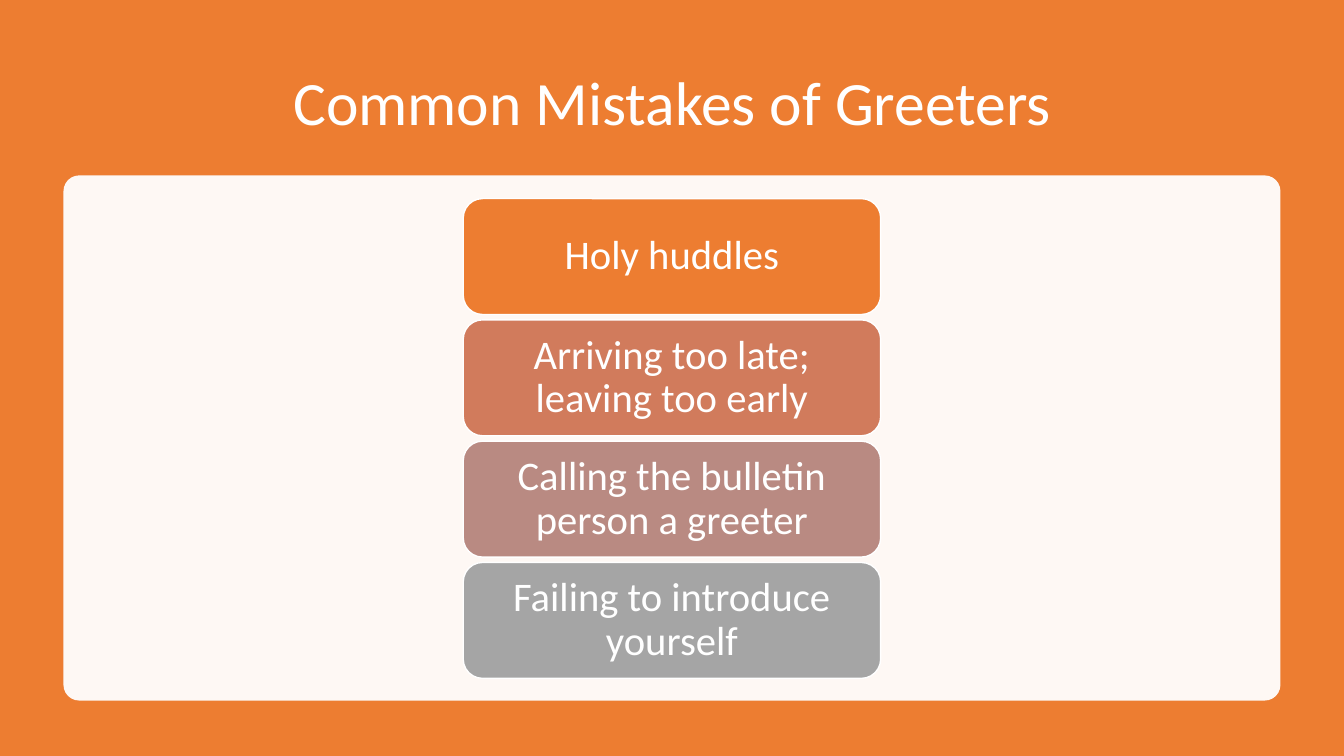
"""Build the slide on common mistakes of greeters."""
from lxml.etree import SubElement
from pptx import Presentation
from pptx.dml.color import RGBColor
from pptx.enum.shapes import MSO_SHAPE as Shape
from pptx.enum.text import MSO_ANCHOR as Anchor, MSO_AUTO_SIZE as AutoSize, PP_ALIGN as Align
from pptx.oxml.ns import qn
from pptx.util import Inches, Pt

HEADING = "Common Mistakes of Greeters"
MISTAKES = [
    ("Holy huddles", "ED7D31"),
    ("Arriving too late; leaving too early", "D17B5C"),
    ("Calling the bulletin person a greeter", "B98A82"),
    ("Failing to introduce yourself", "A5A5A5"),
]
ORANGE, WHITE = "ED7D31", "FFFFFF"
SLIDE_W, SLIDE_H = 13.33, 7.5
STACK_TOP, STACK_BOTTOM = 1.97, 6.73
BOX_W, BOX_H = 4.14, 1.15
FRAME = {
    "word_wrap": True,
    "auto_size": AutoSize.NONE,
    "vertical_anchor": Anchor.MIDDLE,
    "margin_left": Inches(0.12),
    "margin_right": Inches(0.12),
    "margin_top": Inches(0.06),
    "margin_bottom": Inches(0.06),
}
PARAGRAPH = {"alignment": Align.CENTER, "line_spacing": 0.9}


def paint(color_format, color):
    color_format.rgb = RGBColor.from_string(color)


def apply(target, values):
    for key, value in values.items():
        setattr(target, key, value)


def write(holder, words, size):
    frame = holder.text_frame
    frame.text = words
    apply(frame, FRAME)
    paragraph = frame.paragraphs[0]
    apply(paragraph, PARAGRAPH)
    font = paragraph.runs[0].font
    apply(font, {"name": "Calibri", "size": Pt(size)})
    paint(font.color, WHITE)


def add_block(slide, kind, place, color, outline=None):
    block = slide.shapes.add_shape(kind, *map(Inches, place))
    block.shadow.inherit = False
    block.fill.solid()
    paint(block.fill.fore_color, color)
    if outline:
        paint(block.line.color, outline)
        block.line.width = Pt(1)
    else:
        block.line.fill.background()
    return block


def main():
    deck = Presentation()
    deck.slide_width, deck.slide_height = Inches(SLIDE_W), Inches(SLIDE_H)
    slide = deck.slides.add_slide(deck.slide_layouts[5])

    heading = slide.shapes.title
    backdrop = add_block(slide, Shape.RECTANGLE, (0, 0, SLIDE_W, SLIDE_H), ORANGE)
    heading.element.addprevious(backdrop.element)
    apply(heading, {"left": Inches(0.92), "top": Inches(0.5),
                    "width": Inches(11.5), "height": Inches(1.1)})
    write(heading, HEADING, 44)

    panel = add_block(slide, Shape.ROUNDED_RECTANGLE, (0.63, 1.74, 12.07, 5.21), WHITE)
    panel.adjustments[0] = 0.03
    panel_color = panel.element.spPr.find(qn("a:solidFill"))[0]
    SubElement(panel_color, qn("a:alpha"), val="95000")

    pitch = (STACK_BOTTOM - STACK_TOP - BOX_H) / (len(MISTAKES) - 1)
    left = (SLIDE_W - BOX_W) / 2
    for row, (mistake, color) in enumerate(MISTAKES):
        place = (left, STACK_TOP + row * pitch, BOX_W, BOX_H)
        box = add_block(slide, Shape.ROUNDED_RECTANGLE, place, color, WHITE)
        write(box, mistake, 29)

    deck.save("out.pptx")


if __name__ == "__main__":
    main()
